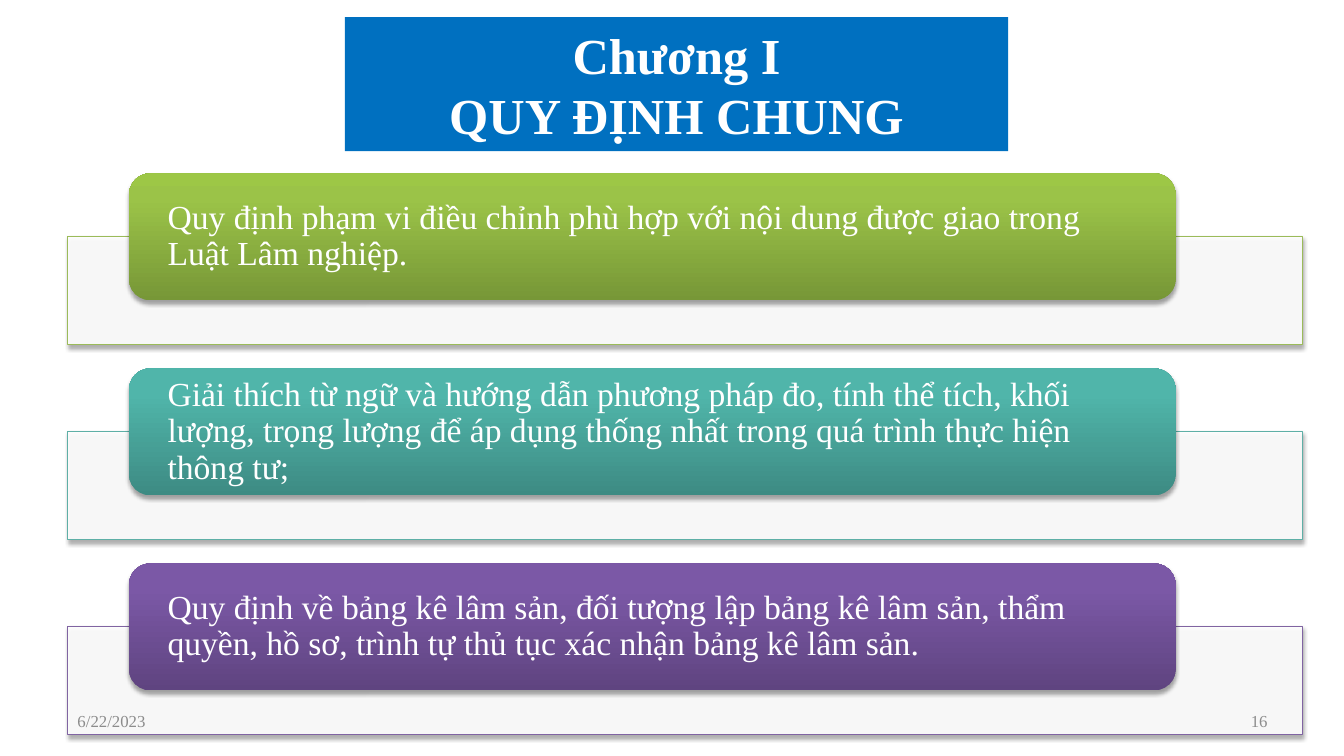
from dataclasses import dataclass

from lxml import etree
from pptx import Presentation
from pptx.dml.color import RGBColor
from pptx.enum.shapes import MSO_SHAPE as Shape
from pptx.enum.text import MSO_ANCHOR as Anchor, PP_ALIGN as Align
from pptx.oxml import parse_xml
from pptx.oxml.ns import nsdecls, qn
from pptx.util import Inches, Pt


@dataclass(frozen=True)
class Theme:
    font: str = "Times New Roman"
    white: str = "FFFFFF"
    title_fill: str = "0070C0"
    footer: str = "8C8C8C"
    title_size: int = 36
    card_size: int = 24
    footer_size: int = 12


@dataclass(frozen=True)
class Card:
    text: str
    line: str
    gradient: tuple[str, str, str]  # bottom to top


@dataclass(frozen=True)
class Footer:
    text: str
    left: float
    align: Align


THEME = Theme()
CARDS = [
    Card("Quy định phạm vi điều chỉnh phù hợp với nội dung được giao trong Luật Lâm nghiệp.",
         "9BBB59", ("779737", "9BC348", "9DC746")),
    Card("Giải thích từ ngữ và hướng dẫn phương pháp đo, tính thể tích, khối lượng, "
         "trọng lượng để áp dụng thống nhất trong quá trình thực hiện thông tư;",
         "5EAFA6", ("3D8B83", "50B5AA", "4EB8AC")),
    Card("Quy định về bảng kê lâm sản, đối tượng lập bảng kê lâm sản, thẩm quyền, "
         "hồ sơ, trình tự thủ tục xác nhận bảng kê lâm sản.",
         "8064A2", ("5F4480", "7B58A6", "7C57A8")),
]
FOOTERS = [Footer("6/22/2023", 0.67, Align.LEFT), Footer("16", 9.56, Align.RIGHT)]
STOPS = (0, 80, 100)
FIRST_TOP, LAST_TOP = 1.72, 5.59
PITCH = (LAST_TOP - FIRST_TOP) / (len(CARDS) - 1)
PANEL_DROP = 0.63


def add_box(slide, kind: Shape, left: float, top: float, width: float, height: float):
    sp = slide.shapes.add_shape(kind, Inches(left), Inches(top), Inches(width), Inches(height))
    sp.shadow.inherit = False
    sp.line.fill.background()
    return sp


def write(sp, text: str, size: int, color: str, align: Align, bold: bool = False):
    tf = sp.text_frame
    tf.word_wrap = True
    tf.vertical_anchor = Anchor.MIDDLE
    tf.text = text
    p = tf.paragraphs[0]
    p.alignment = align
    for r in p.runs:
        r.font.name = THEME.font
        r.font.size = Pt(size)
        r.font.bold = bold
        r.font.color.rgb = RGBColor.from_string(color)
    return tf


def fill_solid(sp, color: str) -> None:
    sp.fill.solid()
    sp.fill.fore_color.rgb = RGBColor.from_string(color)


def fill_gradient(sp, colors: tuple[str, str, str]) -> None:
    stops = "".join(f'<a:gs pos="{pos * 1000}"><a:srgbClr val="{color}"/></a:gs>'
                    for pos, color in zip(STOPS, colors))
    geometry = sp._element.spPr.find(qn("a:prstGeom"))
    geometry.addnext(parse_xml(
        f'<a:gradFill {nsdecls("a")} rotWithShape="1"><a:gsLst>{stops}</a:gsLst>'
        '<a:lin ang="16200000" scaled="0"/></a:gradFill>'))


def add_shadow(sp) -> None:
    effects = sp._element.spPr.find(qn("a:effectLst"))
    effects.append(parse_xml(
        f'<a:outerShdw {nsdecls("a")} blurRad="{Pt(3.1)}" dist="{Pt(1.8)}" dir="5400000" '
        'rotWithShape="0"><a:srgbClr val="000000"><a:alpha val="35000"/></a:srgbClr>'
        '</a:outerShdw>'))


def add_card(slide, card: Card, top: float) -> None:
    # Pale panel behind the card
    panel = add_box(slide, Shape.RECTANGLE, 0.67, top + PANEL_DROP, 12.25, 1.07)
    fill_solid(panel, THEME.white)
    color = panel._element.spPr.find(qn("a:solidFill"))[0]
    etree.SubElement(color, qn("a:alpha")).set("val", "90000")
    panel.line.color.rgb = RGBColor.from_string(card.line)
    panel.line.width = Pt(0.75)
    add_shadow(panel)

    # Rounded card with its text
    sp = add_box(slide, Shape.ROUNDED_RECTANGLE, 1.28, top, 10.38, 1.26)
    fill_gradient(sp, card.gradient)
    add_shadow(sp)
    tf = write(sp, card.text, THEME.card_size, THEME.white, Align.LEFT)
    tf.margin_left = tf.margin_right = Inches(0.32)
    tf.margin_top = tf.margin_bottom = 0
    tf.paragraphs[0].line_spacing = 0.9


def main() -> None:
    prs = Presentation()
    prs.slide_width, prs.slide_height = Inches(13.33), Inches(7.5)
    slide = prs.slides.add_slide(prs.slide_layouts[6])

    # Title
    title = add_box(slide, Shape.RECTANGLE, 3.42, 0.17, 6.58, 1.33)
    fill_solid(title, THEME.title_fill)
    write(title, "Chương I\vQUY ĐỊNH CHUNG", THEME.title_size, THEME.white, Align.CENTER, True)

    # Cards
    for i, card in enumerate(CARDS):
        add_card(slide, card, FIRST_TOP + i * PITCH)

    # Date and page number
    for footer in FOOTERS:
        box = slide.shapes.add_textbox(Inches(footer.left), Inches(6.95), Inches(3.11), Inches(0.4))
        write(box, footer.text, THEME.footer_size, THEME.footer, footer.align)

    prs.save("out.pptx")


if __name__ == "__main__":
    main()
